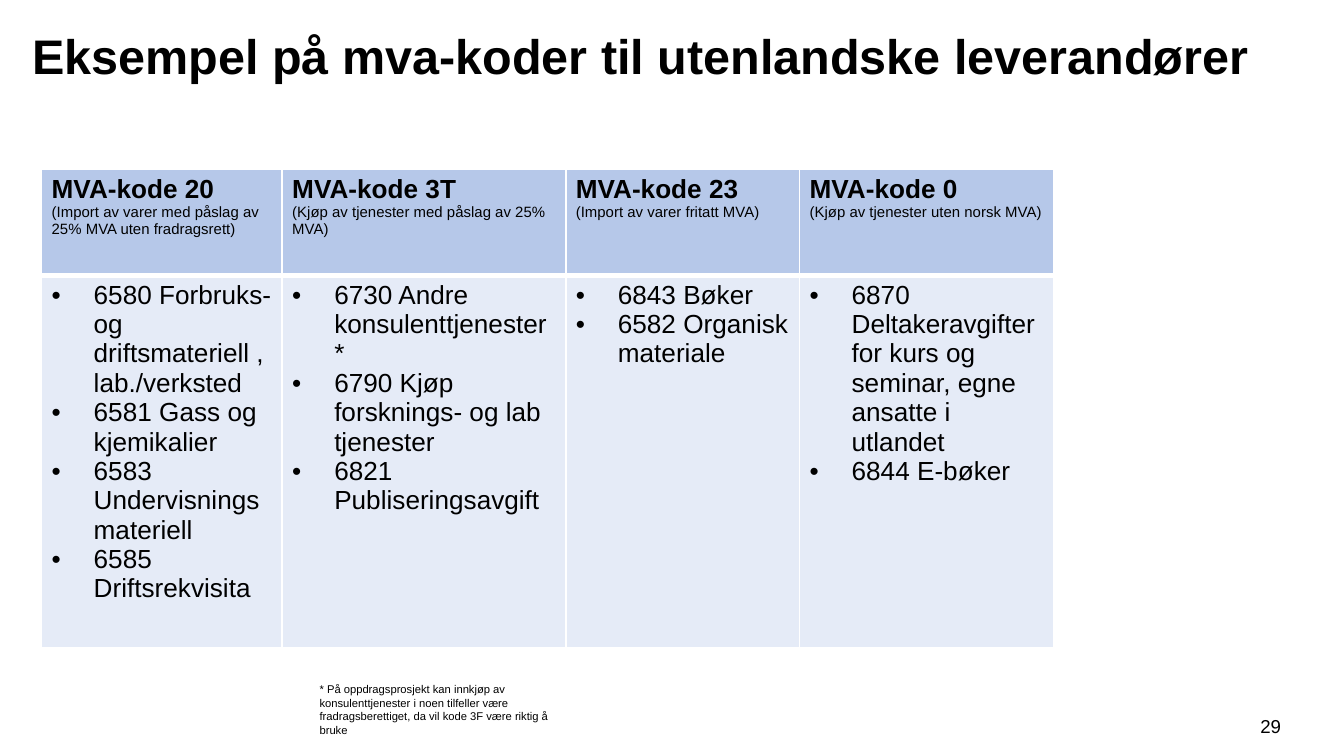
from dataclasses import dataclass

from lxml import etree
from pptx import Presentation
from pptx.dml.color import RGBColor
from pptx.enum import text
from pptx.oxml import ns
from pptx.util import Inches, Pt

TITLE = "Eksempel på mva-koder til utenlandske leverandører"
FOOTNOTE = ("* På oppdragsprosjekt kan innkjøp av konsulenttjenester i noen tilfeller være "
            "fradragsberettiget, da vil kode 3F være riktig å bruke")
PAGE_NUMBER = "29"

# code, explanation, column width in inches, accounts
VAT_CODES = [
    ("MVA-kode 20", "(Import av varer med påslag av 25% MVA uten fradragsrett)", 1.79,
     ["6580 Forbruks- og driftsmateriell , lab./verksted",
      "6581 Gass og kjemikalier",
      "6583 Undervisningsmateriell",
      "6585 Driftsrekvisita"]),
    ("MVA-kode 3T", "(Kjøp av tjenester med påslag av 25% MVA)", 2.11,
     ["6730 Andre konsulenttjenester*",
      "6790 Kjøp forsknings- og lab tjenester",
      "6821 Publiseringsavgift"]),
    ("MVA-kode 23", "(Import av varer fritatt MVA)", 1.74,
     ["6843 Bøker", "6582 Organisk materiale"]),
    ("MVA-kode 0", "(Kjøp av tjenester uten norsk MVA)", 1.89,
     ["6870 Deltakeravgifter for kurs og seminar, egne ansatte i utlandet",
      "6844 E-bøker"]),
]
ROW_HEIGHTS = (0.79, 2.77)


@dataclass(frozen=True)
class Theme:
    font: str = "Arial"
    ink: str = "000000"
    header: str = "B6C8E9"
    body: str = "E5EBF7"
    rule: str = "FFFFFF"
    title: int = 26
    table: int = 14
    detail: int = 8
    note: int = 6
    number: int = 10
    thin: int = 1
    thick: int = 3


THEME = Theme()


def write(para, words, size, bold=False):
    span = para.add_run()
    span.text = words
    span.font.name = THEME.font
    span.font.size = Pt(size)
    span.font.bold = bold
    span.font.color.rgb = RGBColor.from_string(THEME.ink)


def place(box, left, top, width, height):
    box.left, box.top = Inches(left), Inches(top)
    box.width, box.height = Inches(width), Inches(height)


def add_note(page, area, words, size, align, anchor):
    box = page.shapes.add_textbox(*map(Inches, area))
    frame = box.text_frame
    frame.word_wrap = True
    frame.vertical_anchor = anchor
    frame.paragraphs[0].alignment = align
    write(frame.paragraphs[0], words, size)


def add_bullet(para):
    indent = Pt(22.5)
    props = para._p.get_or_add_pPr()
    props.set("marL", str(indent))
    props.set("indent", str(-indent))
    etree.SubElement(props, ns.qn("a:buFont")).set("typeface", THEME.font)
    etree.SubElement(props, ns.qn("a:buChar")).set("char", "•")


def style_cell(cell, fill, top, bottom):
    """Set margins, borders (widths in points) and fill."""
    cell.margin_left = cell.margin_right = Pt(5.4)
    cell.margin_top = cell.margin_bottom = Pt(2.7)
    props = cell._tc.get_or_add_tcPr()
    widths = {"lnL": THEME.thin, "lnR": THEME.thin, "lnT": top, "lnB": bottom}
    for side, width in widths.items():
        line = etree.SubElement(props, ns.qn("a:" + side))
        line.set("w", str(Pt(width)))
        paint = etree.SubElement(line, ns.qn("a:solidFill"))
        etree.SubElement(paint, ns.qn("a:srgbClr")).set("val", THEME.rule)
    cell.fill.solid()
    cell.fill.fore_color.rgb = RGBColor.from_string(fill)


def add_code_table(page):
    total_width = sum(width for _, _, width, _ in VAT_CODES)
    table = page.shapes.add_table(
        len(ROW_HEIGHTS), len(VAT_CODES), Inches(0.31), Inches(1.26),
        Inches(total_width), Inches(sum(ROW_HEIGHTS))).table
    for row, height in zip(table.rows, ROW_HEIGHTS):
        row.height = Inches(height)
    for index, (code, detail, width, accounts) in enumerate(VAT_CODES):
        table.columns[index].width = Inches(width)
        header, body = table.cell(0, index), table.cell(1, index)
        style_cell(header, THEME.header, THEME.thin, THEME.thick)
        style_cell(body, THEME.body, THEME.thick, THEME.thin)
        write(header.text_frame.paragraphs[0], code, THEME.table, True)
        write(header.text_frame.add_paragraph(), detail, THEME.detail)
        frame = body.text_frame
        for position, account in enumerate(accounts):
            para = frame.add_paragraph() if position else frame.paragraphs[0]
            add_bullet(para)
            write(para, account, THEME.table)


def main():
    deck = Presentation()
    deck.slide_width = Inches(10)
    deck.slide_height = deck.slide_width * 9 // 16
    page = deck.slides.add_slide(deck.slide_layouts[5])

    title = page.shapes.title
    place(title, 0.14, 0.14, 9.86, 0.54)
    title.text_frame.vertical_anchor = text.MSO_ANCHOR.TOP
    heading = title.text_frame.paragraphs[0]
    heading.alignment = text.PP_ALIGN.LEFT
    write(heading, TITLE, THEME.title, True)

    add_code_table(page)
    add_note(page, (2.28, 4.94, 1.97, 0.68), FOOTNOTE, THEME.note,
             text.PP_ALIGN.LEFT, text.MSO_ANCHOR.MIDDLE)
    add_note(page, (9.27, 5.27, 0.37, 0.3), PAGE_NUMBER, THEME.number,
             text.PP_ALIGN.CENTER, text.MSO_ANCHOR.TOP)
    deck.save("out.pptx")


if __name__ == "__main__":
    main()
